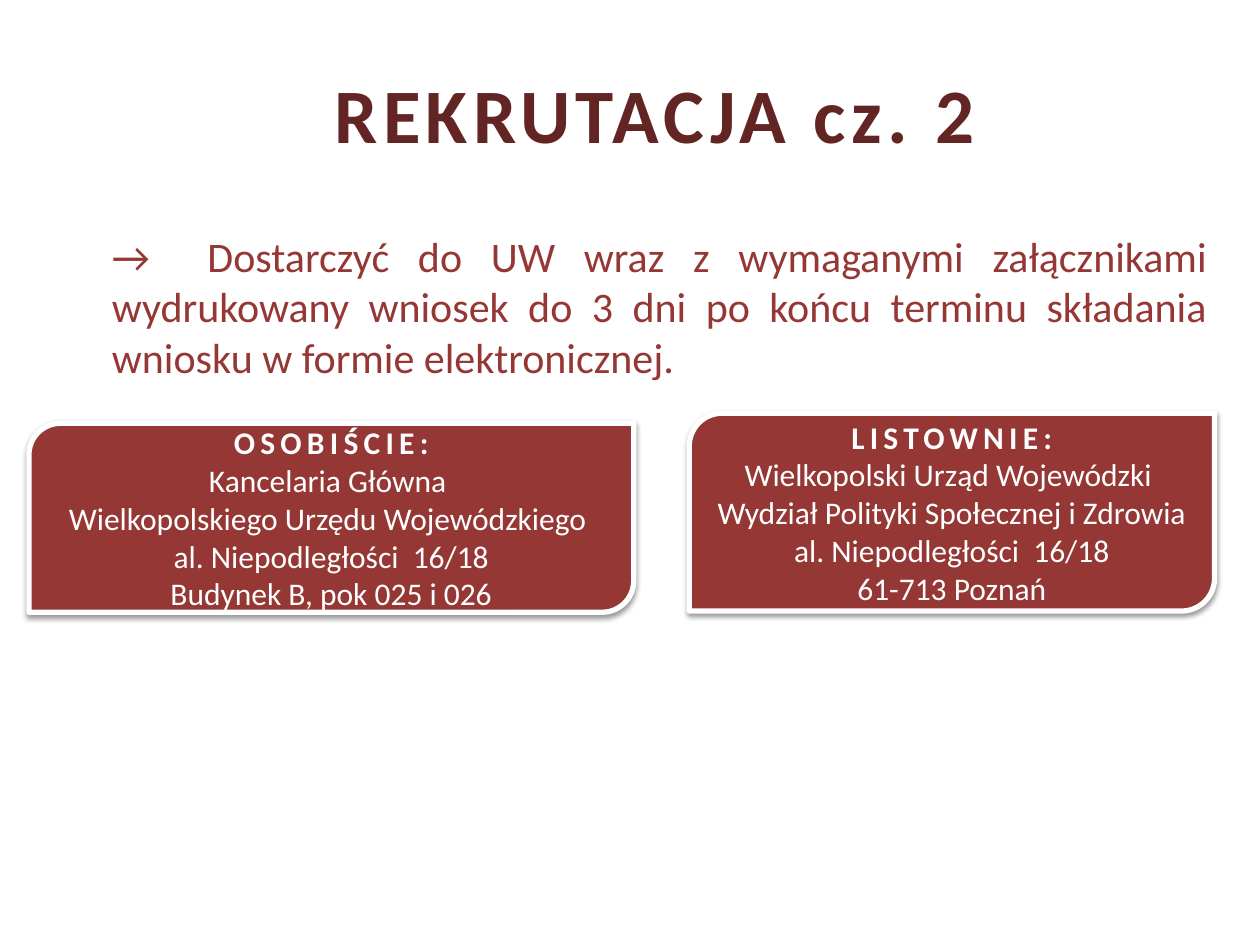
"""Builds the recruitment slide with two delivery addresses."""
from lxml.etree import SubElement
from pptx import Presentation
from pptx.dml.color import RGBColor
from pptx.enum.shapes import MSO_SHAPE as Shape
from pptx.enum.text import MSO_ANCHOR as Anchor, PP_ALIGN as Align
from pptx.oxml.ns import qn
from pptx.util import Inches, Pt


def color(value):
    return RGBColor.from_string(value)


def style(paragraph, size, value, align, bold=False):
    paragraph.alignment = align
    for run in paragraph.runs:
        run.font.name = "Calibri"
        run.font.size = Pt(size)
        run.font.bold = bold
        run.font.color.rgb = color(value)
        if bold:
            run.font._element.set("spc", "300")


DARK, RED, WHITE = "632523", "953735", "FFFFFF"
LEFT = 0.23
ADDRESSES = [
    (5.47, 3.28, 4.17, 1.57, [
        "LISTOWNIE:",
        "Wielkopolski Urząd Wojewódzki ",
        "Wydział Polityki Społecznej i Zdrowia",
        "al. Niepodległości  16/18",
        "61-713 Poznań"]),
    (LEFT, 3.36, 4.8, 1.5, [
        "OSOBIŚCIE:",
        "Kancelaria Główna ",
        "Wielkopolskiego Urzędu Wojewódzkiego ",
        "al. Niepodległości  16/18",
        "Budynek B, pok 025 i 026"]),
]

prs = Presentation()
prs.slide_width, prs.slide_height = Inches(10), Inches(7.5)
slide = prs.slides.add_slide(prs.slide_layouts[5])

heading = slide.shapes.title
heading.left, heading.top = Inches(1.18), Inches(0.38)
heading.width, heading.height = Inches(8.04), Inches(1.03)
heading.text_frame.text = "REKRUTACJA cz. 2"
heading.text_frame.vertical_anchor = Anchor.MIDDLE
style(heading.text_frame.paragraphs[0], 44, DARK, Align.CENTER, bold=True)

instruction = slide.shapes.add_textbox(
    Inches(LEFT), Inches(1.78), Inches(9.45), Inches(3.92)).text_frame
instruction.word_wrap = True
instruction.text = (
    "\t→  Dostarczyć do UW wraz z wymaganymi załącznikami wydrukowany wniosek "
    "do 3 dni po końcu terminu składania wniosku w formie elektronicznej.")
delivery = instruction.paragraphs[0]
indent = Inches(0.56)
delivery._p.get_or_add_pPr().set("marL", str(indent))
delivery._p.get_or_add_pPr().set("indent", str(-indent))
style(delivery, 24, RED, Align.JUSTIFY)

for left, top, width, height, lines in ADDRESSES:
    card = slide.shapes.add_shape(
        Shape.ROUND_2_DIAG_RECTANGLE,
        Inches(left), Inches(top), Inches(width), Inches(height))
    card.fill.solid()
    card.fill.fore_color.rgb = color(RED)
    card.line.color.rgb = color(WHITE)
    card.line.width = Pt(3)
    card.shadow.inherit = False
    effects = card._element.spPr.find(qn("a:effectLst"))
    shadow = SubElement(
        effects, qn("a:outerShdw"), blurRad=str(Pt(3.1)), dist=str(Pt(1.6)),
        dir="5400000", rotWithShape="0")
    shade = SubElement(shadow, qn("a:srgbClr"), val="000000")
    SubElement(shade, qn("a:alpha"), val="38000")
    address = card.text_frame
    address.word_wrap = True
    address.vertical_anchor = Anchor.MIDDLE
    address.text = "\n".join(lines)
    for row, paragraph in enumerate(address.paragraphs):
        style(paragraph, 18, WHITE, Align.CENTER, bold=row == 0)

prs.save("out.pptx")
